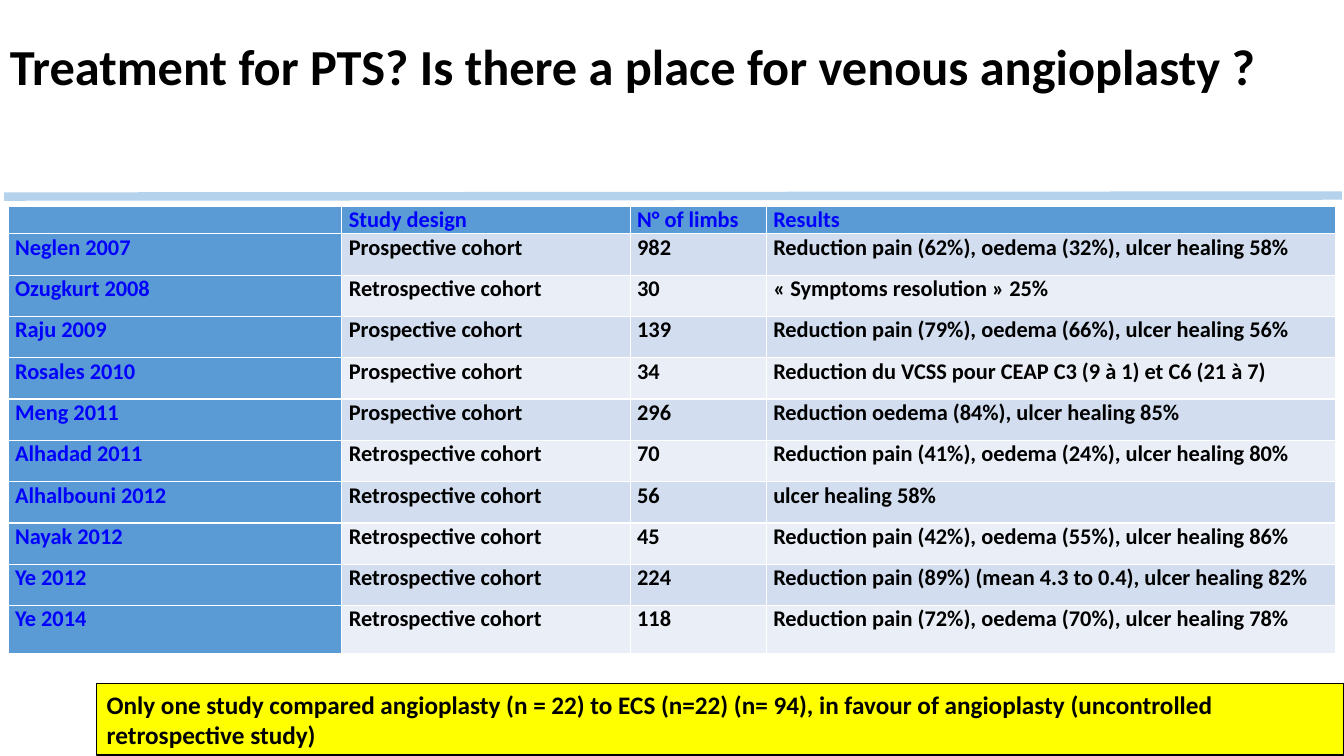
import dataclasses

import lxml.etree
import pptx
import pptx.dml.color
import pptx.enum.shapes
import pptx.enum.text
import pptx.oxml.ns
import pptx.util

Inches = pptx.util.Inches
Pt = pptx.util.Pt
qn = pptx.oxml.ns.qn


@dataclasses.dataclass(frozen=True)
class Theme:
    font: str = "Calibri"
    title_size: int = 36
    table_size: int = 16
    callout_size: int = 18
    text: str = "000000"
    label: str = "0000FF"
    rule: str = "B5D2EC"
    header: str = "5B9BD5"
    bands: tuple = ("D2DEEF", "EAEFF7")
    border: str = "FFFFFF"
    callout: str = "FFFF00"


theme = Theme()


def rgb(value):
    return pptx.dml.color.RGBColor.from_string(value)


def write(para, text, size, color):
    """Add one bold run to a paragraph."""
    span = para.add_run()
    span.text = text
    span.font.name = theme.font
    span.font.size = Pt(size)
    span.font.bold = True
    span.font.color.rgb = rgb(color)


deck = pptx.Presentation()
deck.slide_width = Inches(13.33)
deck.slide_height = Inches(7.5)
page = deck.slides.add_slide(deck.slide_layouts[6])

# Rule under the title
rule = page.shapes.add_connector(
    pptx.enum.shapes.MSO_CONNECTOR.STRAIGHT,
    Inches(0.04), Inches(1.95), Inches(13.31), Inches(1.94),
)
rule.line.color.rgb = rgb(theme.rule)
rule.line.width = Pt(6)
lxml.etree.SubElement(rule._element.spPr, qn("a:effectLst"))

# Title
title = page.shapes.add_textbox(Inches(0), Inches(0.06), Inches(13.33), Inches(1.25))
title.text_frame.word_wrap = True
title.text_frame.vertical_anchor = pptx.enum.text.MSO_ANCHOR.MIDDLE
title_para = title.text_frame.paragraphs[0]
title_para.line_spacing = 0.9
write(title_para, "Treatment for PTS? Is there a place for venous angioplasty ?",
      theme.title_size, theme.text)

# Table of studies
studies = [
    ("", "Study design", "N° of limbs", "Results"),
    ("Neglen 2007", "Prospective cohort", "982",
     "Reduction pain (62%), oedema (32%), ulcer healing 58%"),
    ("Ozugkurt 2008", "Retrospective cohort", "30", "« Symptoms resolution » 25%"),
    ("Raju 2009", "Prospective cohort", "139",
     "Reduction pain (79%), oedema (66%), ulcer healing 56%"),
    ("Rosales 2010", "Prospective cohort", "34",
     "Reduction du VCSS pour CEAP C3 (9 à 1) et C6 (21 à 7)"),
    ("Meng 2011", "Prospective cohort", "296",
     "Reduction oedema (84%), ulcer healing 85%"),
    ("Alhadad 2011", "Retrospective cohort", "70",
     "Reduction pain (41%), oedema (24%), ulcer healing 80%"),
    ("Alhalbouni 2012", "Retrospective cohort", "56", "ulcer healing 58%"),
    ("Nayak 2012", "Retrospective cohort", "45",
     "Reduction pain (42%), oedema (55%), ulcer healing 86%"),
    ("Ye 2012", "Retrospective cohort", "224",
     "Reduction pain (89%) (mean 4.3 to 0.4), ulcer healing 82%"),
    ("Ye 2014", "Retrospective cohort", "118",
     "Reduction pain (72%), oedema (70%), ulcer healing 78%"),
]
column_widths = [3.31, 2.86, 1.35, 5.65]
row_heights = [0.27] + [0.41] * 9 + [0.48]
table = page.shapes.add_table(
    len(studies), len(column_widths), Inches(0.08), Inches(2.05),
    Inches(sum(column_widths)), Inches(sum(row_heights)),
).table
for column, width in zip(table.columns, column_widths):
    column.width = Inches(width)

for row_index, study in enumerate(studies):
    table.rows[row_index].height = Inches(row_heights[row_index])
    for column_index, text in enumerate(study):
        cell = table.cell(row_index, column_index)
        cell.margin_left = cell.margin_right = Inches(0.07)
        cell.margin_top = cell.margin_bottom = 0
        is_heading = row_index == 0 or column_index == 0

        properties = cell._tc.get_or_add_tcPr()
        for side in ("a:lnL", "a:lnR", "a:lnT", "a:lnB"):
            border = lxml.etree.SubElement(properties, qn(side), w=str(Pt(1)))
            paint = lxml.etree.SubElement(border, qn("a:solidFill"))
            lxml.etree.SubElement(paint, qn("a:srgbClr"), val=theme.border)
        cell.fill.solid()
        cell.fill.fore_color.rgb = rgb(
            theme.header if is_heading else theme.bands[(row_index - 1) % 2])

        para = cell.text_frame.paragraphs[0]
        if text:
            write(para, text, theme.table_size, theme.label if is_heading else theme.text)
        else:
            # The empty corner cell must not stretch the header row
            lxml.etree.SubElement(para._p, qn("a:endParaRPr"), sz=str(theme.table_size * 100))

# Conclusion
callout = page.shapes.add_shape(
    pptx.enum.shapes.MSO_SHAPE.RECTANGLE,
    Inches(0.96), Inches(6.78), Inches(12.37), Inches(0.71),
)
callout.shadow.inherit = False
callout.fill.solid()
callout.fill.fore_color.rgb = rgb(theme.callout)
callout.line.color.rgb = rgb(theme.text)
callout.line.width = Pt(1)
callout.text_frame.word_wrap = True
callout.text_frame.vertical_anchor = pptx.enum.text.MSO_ANCHOR.MIDDLE
callout_para = callout.text_frame.paragraphs[0]
callout_para.alignment = pptx.enum.text.PP_ALIGN.LEFT
write(callout_para,
      "Only one study compared angioplasty (n = 22) to ECS (n=22) (n= 94), "
      "in favour of angioplasty (uncontrolled retrospective study)",
      theme.callout_size, theme.text)

deck.save("out.pptx")
